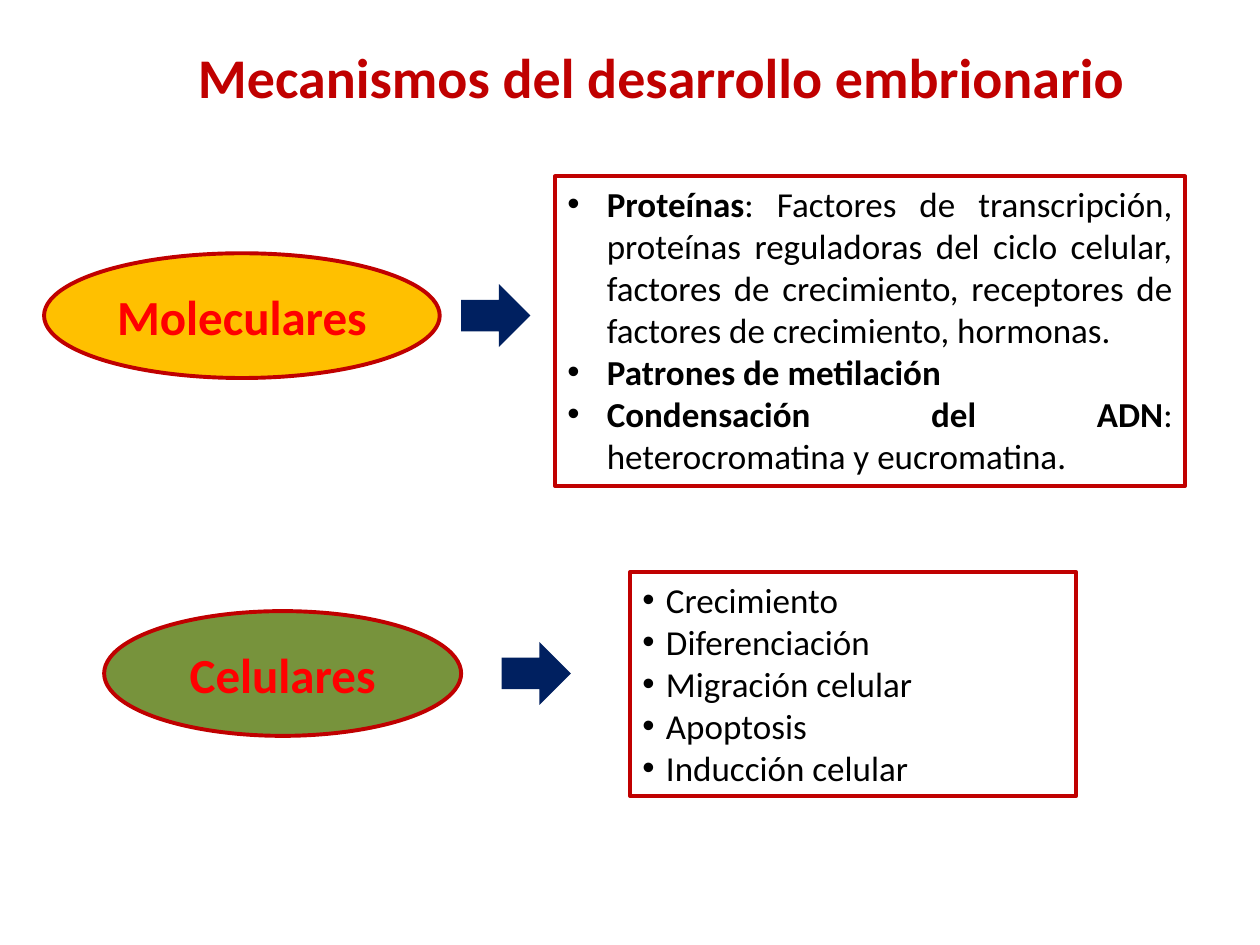
"""Build a slide on the molecular and cellular mechanisms of embryonic development."""
from lxml import etree
from pptx import Presentation
from pptx.dml.color import RGBColor
from pptx.enum.shapes import MSO_SHAPE
from pptx.enum.text import MSO_ANCHOR, PP_ALIGN
from pptx.oxml.ns import qn
from pptx.util import Pt

RECTANGLE, ELLIPSE, ARROW = MSO_SHAPE.RECTANGLE, MSO_SHAPE.OVAL, MSO_SHAPE.RIGHT_ARROW
LEFT, CENTER, JUSTIFY = PP_ALIGN.LEFT, PP_ALIGN.CENTER, PP_ALIGN.JUSTIFY
TOP, MIDDLE = MSO_ANCHOR.TOP, MSO_ANCHOR.MIDDLE

FONT = "Calibri"
COLORS = {"crimson": "C00000", "red": "FF0000", "black": "000000",
          "gold": "FFC000", "green": "77933C", "navy": "002060"}
ARROW_SIZE = (39.6, 36)

TITLE = "Mecanismos del desarrollo embrionario"
TITLE_AREA = (99.4, 20.9, 557.3, 46.1)
GROUPS = [
    {"name": "Moleculares", "fill": "gold", "ellipse": (25.2, 144.7, 226.1, 71.3),
     "arrow_left": 263.5, "list": (317.2, 100.8, 360, 177), "align": JUSTIFY, "indent": 22.5,
     "items": [
         [("Proteínas", True),
          (": Factores de transcripción, proteínas reguladoras del ciclo celular, "
           "factores de crecimiento, receptores de factores de crecimiento, hormonas.", False)],
         [("Patrones de metilación", True)],
         [("Condensación del ADN", True), (": heterocromatina y eucromatina.", False)]]},
    {"name": "Celulares", "fill": "green", "ellipse": (59.5, 349.2, 204, 71.3),
     "arrow_left": 286.6, "list": (360, 326.9, 255, 128), "align": LEFT, "indent": 13.5,
     "items": [[(item, False)] for item in (
         "Crecimiento", "Diferenciación", "Migración celular", "Apoptosis", "Inducción celular")]},
]


def rgb(name):
    return RGBColor.from_string(COLORS[name])


def add_bullet(para, indent):
    properties = para._p.get_or_add_pPr()
    properties.set("marL", str(Pt(indent)))
    properties.set("indent", str(-Pt(indent)))
    etree.SubElement(properties, qn("a:buFont")).set("typeface", "Arial")
    etree.SubElement(properties, qn("a:buChar")).set("char", "•")


def write_text(box, paragraphs, size, color, align=CENTER, anchor=TOP, indent=None):
    frame = box.text_frame
    frame.word_wrap = True
    frame.vertical_anchor = anchor
    for index, spans in enumerate(paragraphs):
        para = frame.add_paragraph() if index else frame.paragraphs[0]
        para.alignment = align
        if indent:
            add_bullet(para, indent)
        for text, bold in spans:
            span = para.add_run()
            span.text = text
            span.font.name, span.font.size, span.font.bold = FONT, Pt(size), bold
            span.font.color.rgb = rgb(color)


def add_figure(page, kind, area, fill=None, line=None):
    figure = page.shapes.add_shape(kind, *map(Pt, area))
    figure.shadow.inherit = False
    if fill:
        figure.fill.solid()
        figure.fill.fore_color.rgb = rgb(fill)
    else:
        figure.fill.background()
    if line:
        figure.line.color.rgb = rgb(line)
        figure.line.width = Pt(2.25)
    else:
        figure.line.fill.background()
    return figure


def add_group(page, group):
    panel = add_figure(page, RECTANGLE, group["list"], line="crimson")
    write_text(panel, group["items"], 20, "black", align=group["align"], indent=group["indent"])
    ellipse = add_figure(page, ELLIPSE, group["ellipse"], group["fill"], "crimson")
    write_text(ellipse, [[(group["name"], True)]], 28, "red", anchor=MIDDLE)
    _, top, _, height = group["ellipse"]
    arrow_top = top + (height - ARROW_SIZE[1]) / 2
    add_figure(page, ARROW, (group["arrow_left"], arrow_top, *ARROW_SIZE), "navy")


def main():
    deck = Presentation()
    deck.slide_width, deck.slide_height = Pt(720), Pt(540)
    page = deck.slides.add_slide(deck.slide_layouts[6])
    title = page.shapes.add_textbox(*map(Pt, TITLE_AREA))
    write_text(title, [[(TITLE, True)]], 32, "crimson")
    for group in GROUPS:
        add_group(page, group)
    deck.save("out.pptx")


if __name__ == "__main__":
    main()
